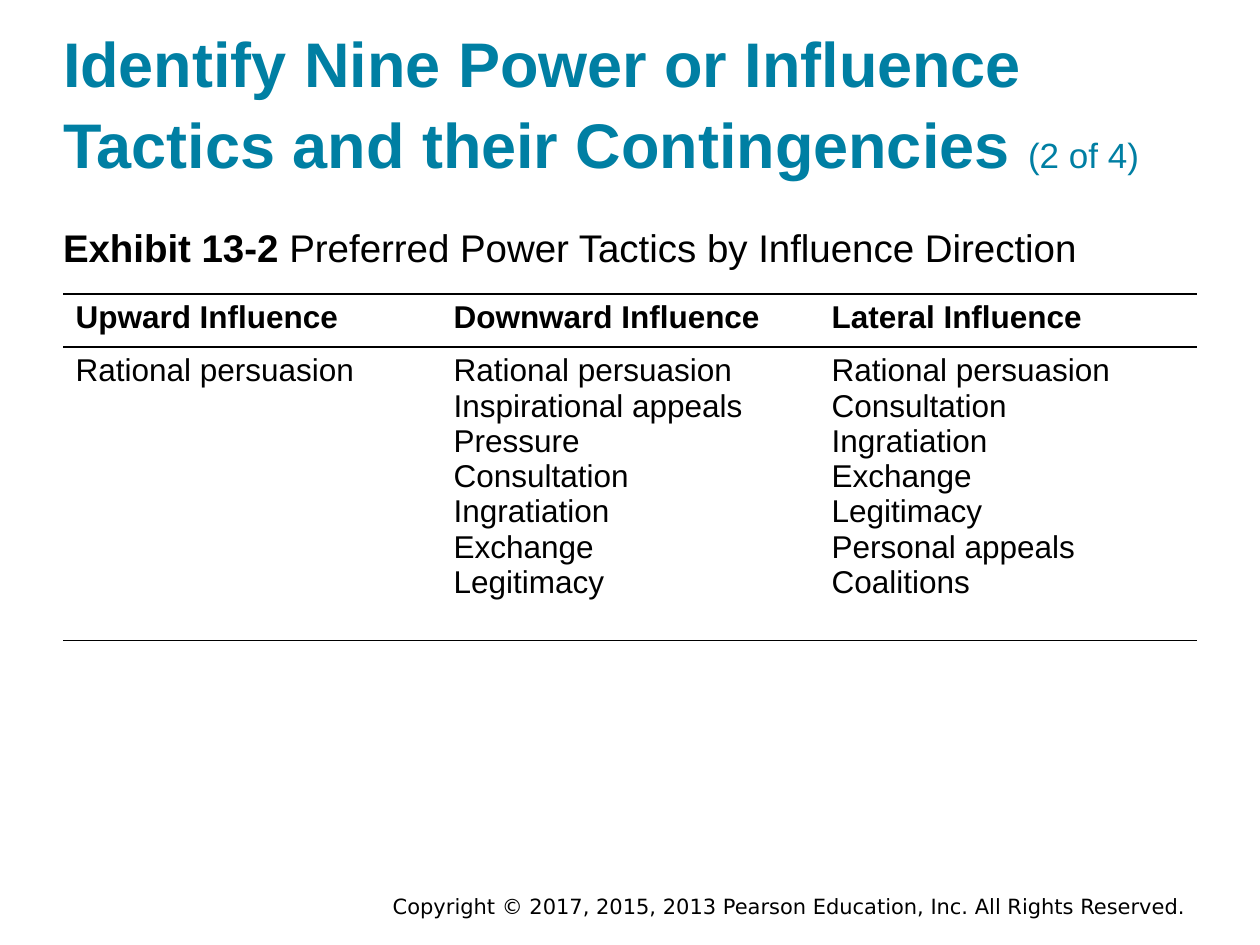
from lxml.etree import SubElement
from pptx import Presentation
from pptx.dml.color import RGBColor
from pptx.enum.text import MSO_ANCHOR, MSO_AUTO_SIZE, PP_ALIGN
from pptx.oxml.ns import qn
from pptx.util import Pt

COLORS = {"title": "007FA3", "text": "000000", "cell": "FFFFFF", "rule": "000000"}
LEFT, WIDTH = 36, 648
HEADING_SPACING = 1.08

TACTICS = {
    "Upward Influence": ["Rational persuasion"],
    "Downward Influence": [
        "Rational persuasion", "Inspirational appeals", "Pressure", "Consultation",
        "Ingratiation", "Exchange", "Legitimacy",
    ],
    "Lateral Influence": [
        "Rational persuasion", "Consultation", "Ingratiation", "Exchange",
        "Legitimacy", "Personal appeals", "Coalitions",
    ],
}


def style_font(font, size, bold=False, color="text", name="Arial"):
    font.name = name
    font.size = Pt(size)
    font.bold = bold
    font.color.rgb = RGBColor.from_string(COLORS[color])


def place(shape, left, top, width, height):
    shape.left, shape.top = Pt(left), Pt(top)
    shape.width, shape.height = Pt(width), Pt(height)


def remove_margins(frame):
    frame.margin_left = frame.margin_right = 0
    frame.margin_top = frame.margin_bottom = 0


def add_styled_run(paragraph, text, size, **style):
    run = paragraph.add_run()
    run.text = text
    style_font(run.font, size, **style)


def add_title(slide):
    title = slide.shapes.title
    place(title, LEFT, 17.28, WIDTH, 86.4)
    frame = title.text_frame
    frame.word_wrap = True
    frame.auto_size = MSO_AUTO_SIZE.NONE
    frame.vertical_anchor = MSO_ANCHOR.BOTTOM
    remove_margins(frame)
    heading = frame.paragraphs[0]
    heading.alignment = PP_ALIGN.LEFT
    heading.line_spacing = HEADING_SPACING
    heading.space_before = Pt(0)
    add_styled_run(heading, "Identify Nine Power or Influence Tactics and their Contingencies ",
                   36, bold=True, color="title")
    add_styled_run(heading, "(2 of 4)", 20, color="title")


def add_text_box(slide, left, top, width, height):
    box = slide.shapes.add_textbox(Pt(left), Pt(top), Pt(width), Pt(height))
    box.text_frame.word_wrap = True
    return box.text_frame


def add_caption(slide):
    frame = add_text_box(slide, LEFT, 126, 588, 30)
    remove_margins(frame)
    caption = frame.paragraphs[0]
    caption.line_spacing = HEADING_SPACING
    add_styled_run(caption, "Exhibit 13-2", 22, bold=True)
    add_styled_run(caption, " Preferred Power Tactics by Influence Direction", 22)


def add_copyright(slide):
    frame = add_text_box(slide, 208, 507, 486, 21.6)
    notice = frame.paragraphs[0]
    notice.text = "Copyright © 2017, 2015, 2013 Pearson Education, Inc. All Rights Reserved."
    notice.alignment = PP_ALIGN.CENTER
    style_font(notice.font, 12, name="DejaVu Sans")


def rule_cell(cell):
    """Draw rules above and below the cell and none at its sides."""
    properties = cell._tc.get_or_add_tcPr()
    for position, side in enumerate(("lnL", "lnR", "lnT", "lnB")):
        line = SubElement(properties, qn(f"a:{side}"), w=str(Pt(1)))
        if side in ("lnT", "lnB"):
            fill = SubElement(line, qn("a:solidFill"))
            SubElement(fill, qn("a:srgbClr"), val=COLORS["rule"])
        else:
            SubElement(line, qn("a:noFill"))
        properties.insert(position, line)


def fill_cell(cell, lines, bold):
    cell.fill.solid()
    cell.fill.fore_color.rgb = RGBColor.from_string(COLORS["cell"])
    rule_cell(cell)
    cell.text_frame.text = "\n".join(lines)
    for paragraph in cell.text_frame.paragraphs:
        style_font(paragraph.font, 18, bold=bold)


def add_tactics_table(slide):
    row_heights = (30.24, 167.76)
    table = slide.shapes.add_table(2, len(TACTICS), Pt(LEFT), Pt(168), Pt(WIDTH),
                                   Pt(sum(row_heights))).table
    table.horz_banding = False
    for row, height in zip(table.rows, row_heights):
        row.height = Pt(height)
    for column, (direction, tactics) in enumerate(TACTICS.items()):
        table.columns[column].width = Pt(WIDTH / len(TACTICS))
        fill_cell(table.cell(0, column), [direction], bold=True)
        fill_cell(table.cell(1, column), tactics, bold=False)


def main():
    deck = Presentation()
    deck.slide_width, deck.slide_height = Pt(720), Pt(540)
    slide = deck.slides.add_slide(deck.slide_layouts.get_by_name("Title Only"))
    add_copyright(slide)
    add_title(slide)
    add_caption(slide)
    add_tactics_table(slide)
    deck.save("out.pptx")


if __name__ == "__main__":
    main()
